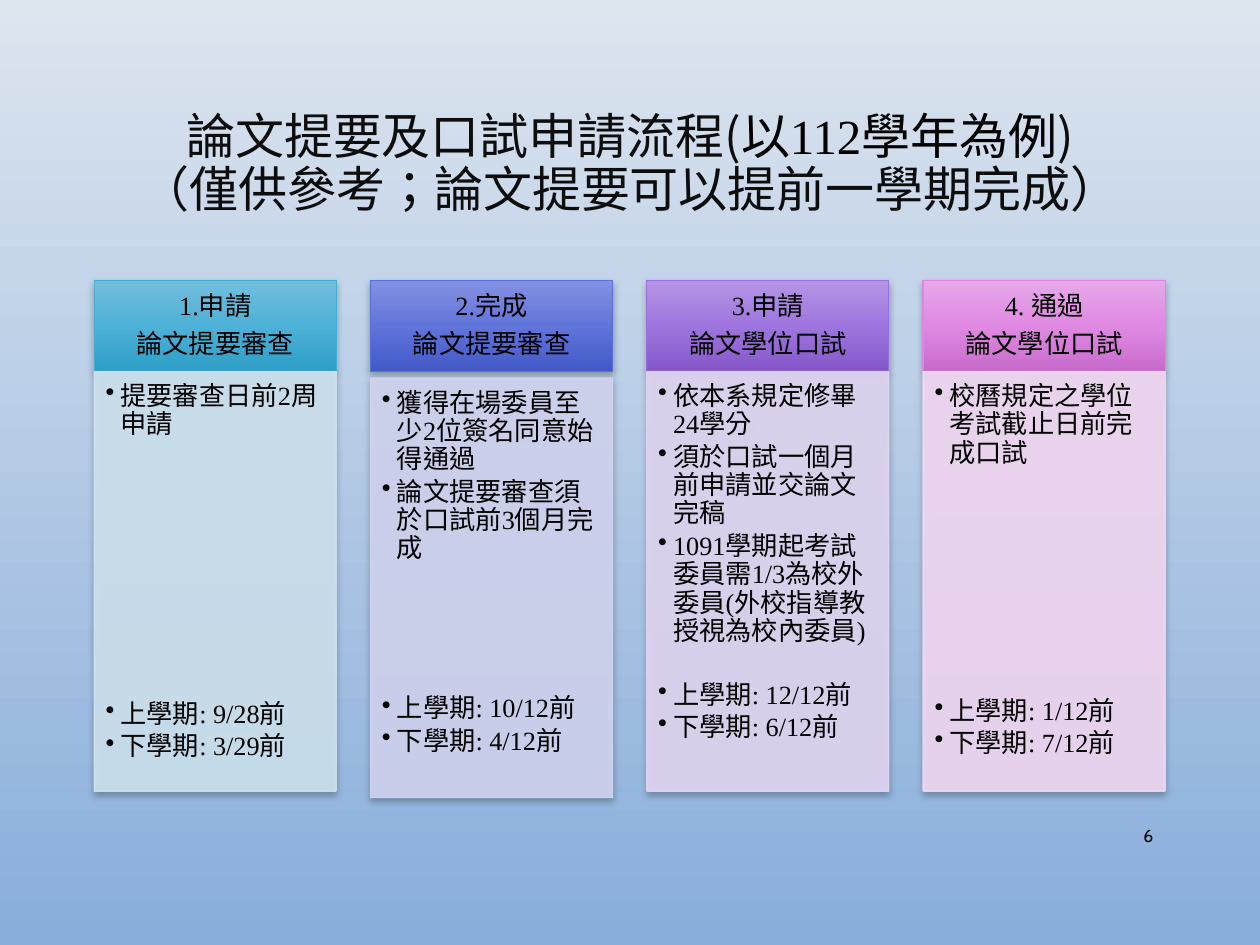
from copy import deepcopy

from lxml import etree
from pptx import Presentation
from pptx.dml.color import RGBColor
from pptx.enum.lang import MSO_LANGUAGE_ID
from pptx.enum.shapes import MSO_SHAPE
from pptx.enum.text import MSO_ANCHOR, PP_ALIGN
from pptx.oxml.ns import qn
from pptx.util import Cm, Pt

RECTANGLE = MSO_SHAPE.RECTANGLE
TOP, MIDDLE = MSO_ANCHOR.TOP, MSO_ANCHOR.MIDDLE
LEFT, CENTER, RIGHT = PP_ALIGN.LEFT, PP_ALIGN.CENTER, PP_ALIGN.RIGHT
TAIWAN = MSO_LANGUAGE_ID.TRADITIONAL_CHINESE
SERIF, CJK = "Times New Roman", "Noto Sans CJK SC"


def rgb(hex_color):
    return RGBColor.from_string(hex_color)


def write(paragraph, text, font=SERIF, size=15, color="000000", align=LEFT,
          line=0.9, before=0, after=0, bullet=False):
    """Add one run to the paragraph and format both."""
    if bullet:
        properties = paragraph._p.get_or_add_pPr()
        properties.set("marL", str(Cm(0.3)))
        properties.set("indent", str(-Cm(0.3)))
        etree.SubElement(properties, qn("a:buChar")).set("char", "•")
    paragraph.alignment = align
    paragraph.line_spacing = line
    paragraph.space_before, paragraph.space_after = Pt(before), Pt(after)
    run = paragraph.add_run()
    run.text = text
    run.font.name, run.font.size = font, Pt(size)
    run.font.color.rgb = rgb(color)
    run.font.language_id = TAIWAN
    etree.SubElement(run.font._element, qn("a:ea")).set("typeface", CJK)


# Slide and background
prs = Presentation()
prs.slide_width, prs.slide_height = Cm(25.4), Cm(19.05)
slide = prs.slides.add_slide(prs.slide_layouts[5])
background = slide.background.fill
background.gradient()
background.gradient_angle = 270
for stop, color in zip(background.gradient_stops, ("DDE5EF", "89AEDB")):
    stop.color.rgb = rgb(color)

# Title
title = slide.shapes.title
title.left, title.top, title.width, title.height = Cm(1.9), Cm(1.1), Cm(21.6), Cm(4.45)
title.text_frame.vertical_anchor = MIDDLE
heading = title.text_frame.paragraphs[0]
title_style = {"size": 28, "align": CENTER}
write(heading, "論文提要及口試申請流程(", font=CJK, color="0D0D0D", **title_style)
write(heading, "以112學年為例", **title_style)
write(heading, ")", font=CJK, color="0D0D0D", **title_style)
heading.add_line_break()
write(heading, "（僅供參考；論文提要可以提前一學期完成）", font=CJK, color="0D0D0D", **title_style)

# Steps: heading, gradient, outline, body colour, body top (cm),
# notes, space before the deadlines (pt), deadlines
steps = [
    (("1.申請", "論文提要審查"), ("73BEDE", "4EB1D7", "2D9EC6"), "43AFD6", "CFE3F0", 7.49,
     ["提要審查日前2周申請"],
     147, ["上學期: 9/28前", "下學期: 3/29前"]),
    (("2.完成", "論文提要審查"), ("8391E1", "6174DA", "4259C8"), "596FD9", "D2D5F1", 7.62,
     ["獲得在場委員至少2位簽名同意始得通過", "論文提要審查須於口試前3個月完成"],
     73, ["上學期: 10/12前", "下學期: 4/12前"]),
    (("3.申請", "論文學位口試"), ("B495E5", "9E75DE", "8557C9"), "9B6FDD", "E2D6F2", 7.49,
     ["依本系規定修畢24學分", "須於口試一個月前申請並交論文完稿",
      "1091學期起考試委員需1/3為校外委員(外校指導教授視為校內委員)"],
     18, ["上學期: 12/12前", "下學期: 6/12前"]),
    (("4. 通過", "論文學位口試"), ("E7A8E9", "DF89E2", "C86BCB"), "DE85E1", "F3D9F4", 7.49,
     ["校曆規定之學位考試截止日前完成口試"],
     129, ["上學期: 1/12前", "下學期: 7/12前"]),
]

for column, (step, gradient, outline, tint, body_top, notes, gap, deadlines) in enumerate(steps):
    left = Cm(1.9 + 5.57 * column)
    header = slide.shapes.add_shape(RECTANGLE, left, Cm(5.66), Cm(4.88), Cm(1.83))
    body = slide.shapes.add_shape(RECTANGLE, left, Cm(body_top), Cm(4.88), Cm(8.46))

    # Header gradient with a third stop
    header.fill.gradient()
    header.fill.gradient_angle = 270
    stop_list = header._element.spPr.find(".//" + qn("a:gsLst"))
    stop_list.append(deepcopy(stop_list[-1]))
    for stop, color, position in zip(header.fill.gradient_stops, gradient, (0, 0.5, 1)):
        stop.color.rgb, stop.position = rgb(color), position
    header.line.color.rgb = rgb(outline)

    # Slightly transparent body
    body.fill.solid()
    body.fill.fore_color.rgb = rgb(tint)
    body.line.color.rgb = rgb(tint)
    for tint_color in body._element.spPr.iter(qn("a:srgbClr")):
        etree.SubElement(tint_color, qn("a:alpha")).set("val", "90000")

    # Outline, soft shadow and margins
    for box, anchor, margins in ((header, MIDDLE, (0.3, 0.18, 0.3, 0.18)),
                                 (body, TOP, (0.23, 0.23, 0.3, 0.33))):
        box.line.width = Pt(0.75)
        box.shadow.inherit = False
        effects = box._element.spPr.find(qn("a:effectLst"))
        shadow = etree.SubElement(effects, qn("a:outerShdw"), blurRad=str(Pt(4)),
                                  dist=str(Pt(2)), dir="5400000", rotWithShape="0")
        shadow_color = etree.SubElement(shadow, qn("a:srgbClr"), val="000000")
        etree.SubElement(shadow_color, qn("a:alpha"), val="28000")
        frame = box.text_frame
        frame.word_wrap, frame.vertical_anchor = True, anchor
        (frame.margin_left, frame.margin_top,
         frame.margin_right, frame.margin_bottom) = map(Cm, margins)

    # Text
    lines = [(header, text, {"align": CENTER, "after": 5.25}) for text in step]
    lines += [(body, text, {"bullet": True, "after": 2.25,
                            "before": gap if text == deadlines[0] else 0})
              for text in notes + deadlines]
    for box, text, style in lines:
        frame = box.text_frame
        first = frame.paragraphs[0]
        write(frame.add_paragraph() if first.runs else first, text, **style)

# Slide number
number = slide.shapes.add_textbox(Cm(21.9), Cm(16.33), Cm(1.6), Cm(1.02)).text_frame
number.word_wrap, number.vertical_anchor = True, MIDDLE
write(number.paragraphs[0], "6", font="Cabin", size=10, align=RIGHT, line=1)

prs.save("out.pptx")
